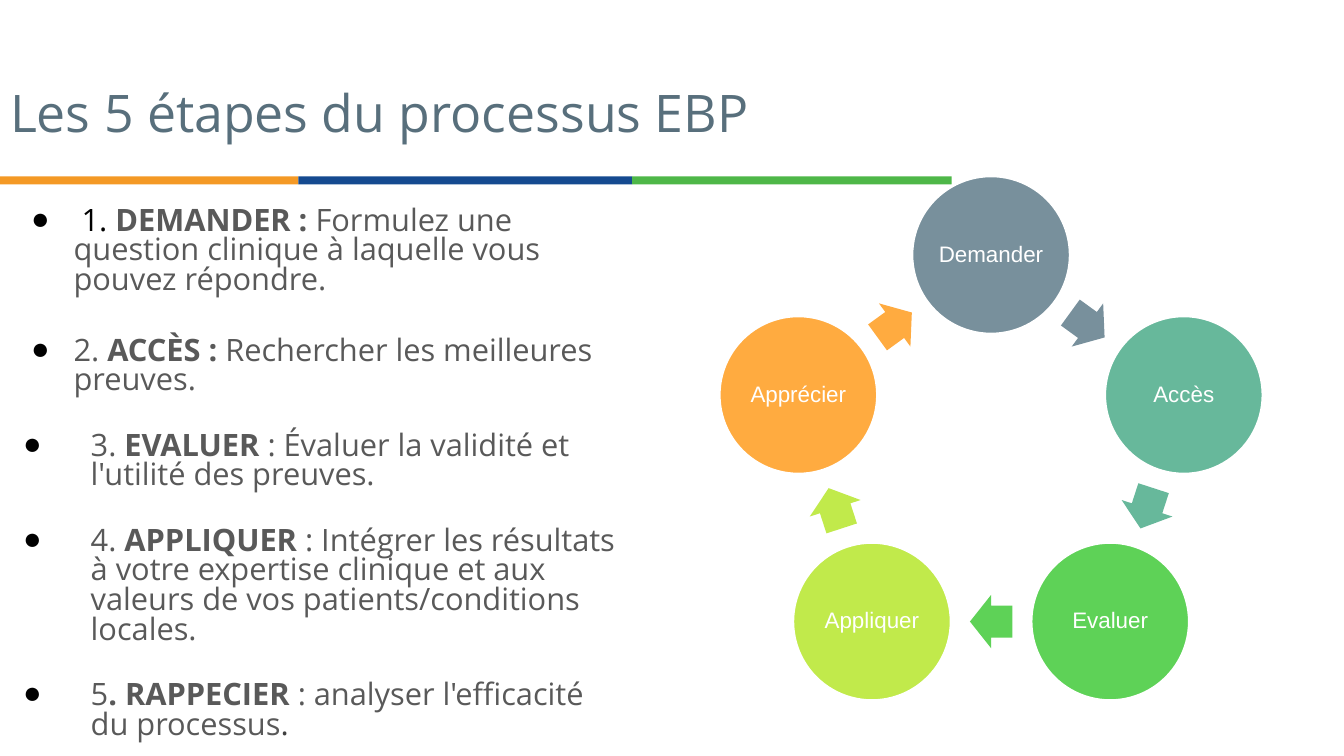
import math

import pptx
import pptx.dml.color
import pptx.enum.shapes
import pptx.enum.text
import pptx.oxml
import pptx.oxml.ns
import pptx.util

TITLE = "Les 5 étapes du processus EBP"
GREY, BLACK, DARK = "595959", "000000", "3F3F3F"

# Steps: left margin, hanging indent, space before, runs (text, bold, colour)
STEPS = [
    (0.5, 0.42, 0, [(" 1. ", False, BLACK), ("DEMANDER : ", True, GREY),
                    ("Formulez une question clinique à laquelle vous pouvez répondre.", False, GREY)]),
    (0.5, 0.42, 29.6, [("2. ", False, GREY), ("ACCÈS :", True, GREY),
                       (" Rechercher les meilleures preuves.", False, GREY)]),
    (0.67, 0.67, 25.6, [("3. ", False, GREY), ("EVALUER ", True, GREY),
                        (": Évaluer la validité et l'utilité des preuves.", False, GREY)]),
    (0.67, 0.67, 25.6, [("4. ", False, GREY), ("APPLIQUER ", True, GREY),
                        (": Intégrer les résultats à votre expertise clinique et aux "
                         "valeurs de vos patients/conditions locales.", False, GREY)]),
    (0.67, 0.67, 25.6, [("5", False, GREY), (". RAPPECIER ", True, GREY),
                        (": analyser l'efficacité du processus", False, GREY),
                        (".", False, DARK)]),
]

# Cycle, clockwise from the top
CYCLE = [("Demander", "78909C"), ("Accès", "67B89B"), ("Evaluer", "5ED257"),
         ("Appliquer", "C1EA4B"), ("Apprécier", "FFAB40")]
CENTRE_X, CENTRE_Y, RADIUS = 9.83, 4.54, 2.01
DIAMETER, ARROW_W, ARROW_H = 1.57, 0.42, 0.53

# Ruled band under the title: width, colour
BAND = [(2.96, "F49925"), (3.31, "154A90"), (3.17, "4EB748")]
BAND_TOP, BAND_HEIGHT = 1.75, 0.08

inch = pptx.util.Inches
points = pptx.util.Pt
PRESET = pptx.enum.shapes.MSO_SHAPE
ALIGN = pptx.enum.text.PP_ALIGN
ANCHOR = pptx.enum.text.MSO_ANCHOR


def colour(value):
    return pptx.dml.color.RGBColor.from_string(value)


def place(item, left, top, width, height):
    item.left, item.top = inch(left), inch(top)
    item.width, item.height = inch(width), inch(height)


def style(font, name, size, value=None):
    font.name, font.size = name, points(size)
    if value:
        font.color.rgb = colour(value)


def add_shape(preset, left, top, width, height, fill):
    shape = page.shapes.add_shape(preset, inch(left), inch(top), inch(width), inch(height))
    shape.shadow.inherit = False
    shape.fill.solid()
    shape.fill.fore_color.rgb = colour(fill)
    shape.line.fill.background()
    return shape


def add_bullet(para, margin, hanging):
    properties = para._p.get_or_add_pPr()
    properties.set("marL", str(inch(margin)))
    properties.set("indent", str(-inch(hanging)))
    namespace = pptx.oxml.ns.nsdecls("a")
    for markup in (f'<a:buClr {namespace}><a:srgbClr val="{BLACK}"/></a:buClr>',
                   f'<a:buFont {namespace} typeface="Arial"/>',
                   f'<a:buChar {namespace} char="●"/>'):
        properties.append(pptx.oxml.parse_xml(markup))


def cycle_point(step):
    angle = math.radians(360 / len(CYCLE) * step)
    return CENTRE_X + RADIUS * math.sin(angle), CENTRE_Y - RADIUS * math.cos(angle)


deck = pptx.Presentation()
deck.slide_width, deck.slide_height = inch(13.33), inch(7.5)
page = deck.slides.add_slide(deck.slide_layouts[1])

# Title
title = page.shapes.title
place(title, 0, 0.56, 8.43, 1.18)
title.text_frame.text = TITLE
title.text_frame.auto_size = pptx.enum.text.MSO_AUTO_SIZE.NONE
title.text_frame.vertical_anchor = ANCHOR.MIDDLE
heading = title.text_frame.paragraphs[0]
heading.alignment = ALIGN.LEFT
heading.line_spacing = 0.9
style(heading.font, "Open Sans", 37, "586F7C")

# List of steps
body = page.placeholders[1]
place(body, 0.13, 2.01, 6.21, 5.49)
frame = body.text_frame
frame.auto_size = pptx.enum.text.MSO_AUTO_SIZE.NONE
for number, (margin, hanging, before, spans) in enumerate(STEPS):
    para = frame.add_paragraph() if number else frame.paragraphs[0]
    add_bullet(para, margin, hanging)
    para.line_spacing = 0.8
    para.space_before = points(before)
    style(para.font, "Open Sans", 22)
    for text, bold, value in spans:
        span = para.add_run()
        span.text = text
        span.font.bold = bold
        span.font.color.rgb = colour(value)

# Band under the title
left = 0
for width, fill in BAND:
    add_shape(PRESET.RECTANGLE, left, BAND_TOP, width, BAND_HEIGHT, fill)
    left += width

# Cycle: each circle, then the arrow halfway to the next one
for step, (label, fill) in enumerate(CYCLE):
    x, y = cycle_point(step)
    circle = add_shape(PRESET.OVAL, x - DIAMETER / 2, y - DIAMETER / 2, DIAMETER, DIAMETER, fill)
    circle.line.color.rgb = colour("FFFFFF")
    circle.line.width = points(2)
    frame = circle.text_frame
    frame.margin_left = frame.margin_right = inch(0.02)
    frame.margin_top = frame.margin_bottom = inch(0.02)
    frame.vertical_anchor = ANCHOR.MIDDLE
    frame.text = label
    para = frame.paragraphs[0]
    para.alignment = ALIGN.CENTER
    para.line_spacing = 0.9
    style(para.font, "Arial", 16, "FFFFFF")

    next_x, next_y = cycle_point(step + 1)
    arrow = add_shape(PRESET.RIGHT_ARROW, (x + next_x - ARROW_W) / 2,
                      (y + next_y - ARROW_H) / 2, ARROW_W, ARROW_H, fill)
    arrow.adjustments[0], arrow.adjustments[1] = 0.6, 0.5
    arrow.rotation = 360 / len(CYCLE) * (step + 0.5)

deck.save("out.pptx")
